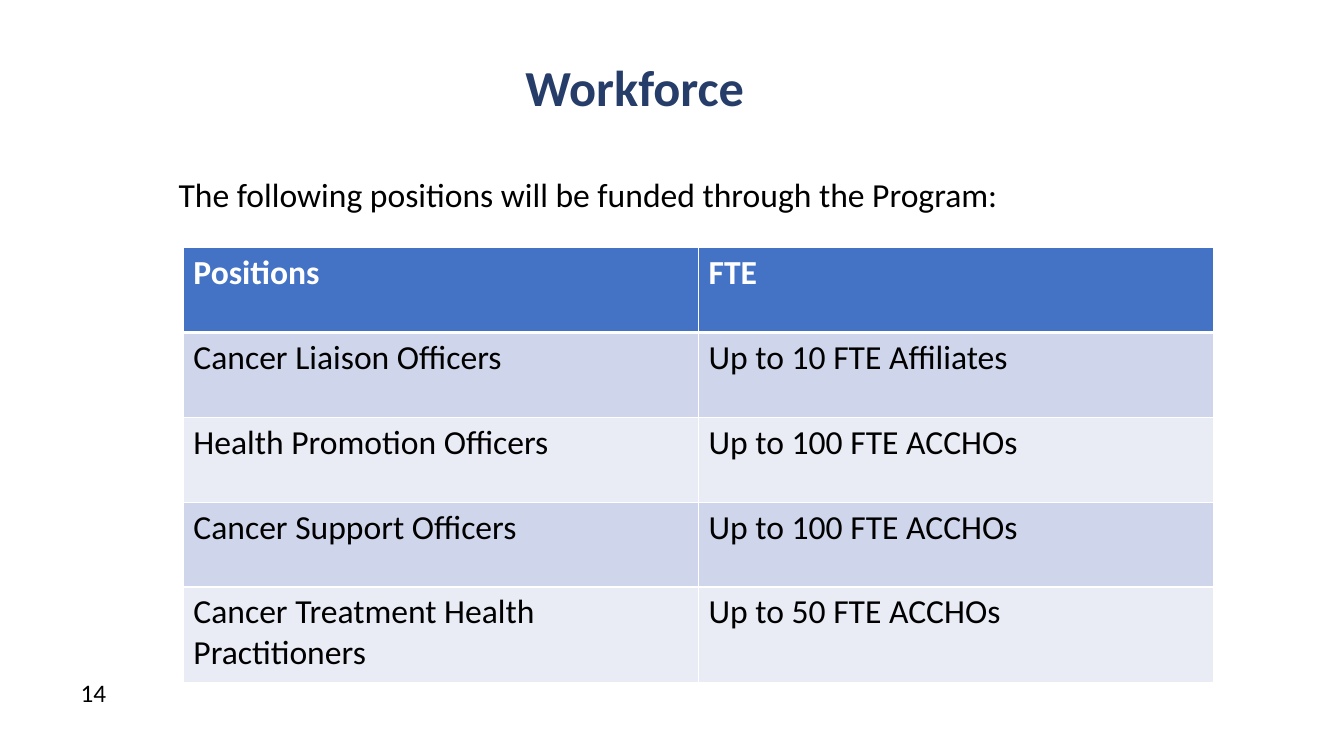
"""Build the Workforce slide with its table of funded positions."""
from pptx import Presentation
from pptx.dml.color import RGBColor
from pptx.enum.text import PP_ALIGN
from pptx.oxml import parse_xml
from pptx.oxml.ns import nsdecls
from pptx.util import Pt

TEXTS = [
    ("Workforce", "title", (104.5, 36.5, 698, 118), PP_ALIGN.CENTER),
    ("The following positions will be funded through the Program:",
     "body", (120.5, 121, 691, 65.5), PP_ALIGN.LEFT),
    ("14", "page", (50.5, 480, 49.5, 29), PP_ALIGN.LEFT),
]
ROWS = [
    ("Positions", "FTE"),
    ("Cancer Liaison Officers", "Up to 10 FTE Affiliates"),
    ("Health Promotion Officers", "Up to 100 FTE ACCHOs"),
    ("Cancer Support Officers", "Up to 100 FTE ACCHOs"),
    ("Cancer Treatment Health Practitioners", "Up to 50 FTE ACCHOs"),
]
LEFT, TOP, COL = 131, 177, 368
HEIGHTS = [60.6] * 4 + [68.4]
THEME = {
    "font": "Calibri",
    "title": (36, "263D69", True),
    "body": (24, "000000", False),
    "head": (24, "FFFFFF", True),
    "page": (18, "000000", False),
    "bands": ("E9EBF5", "CFD5EA"),
    "top": "4472C4",
    "rule": "FFFFFF",
}


def style(para, role):
    size, color, bold = THEME[role]
    font = para.font
    font.name, font.size, font.bold = THEME["font"], Pt(size), bold
    font.color.rgb = RGBColor.from_string(color)


def add_text(slide, text, role, box, align):
    frame = slide.shapes.add_textbox(*map(Pt, box)).text_frame
    frame.word_wrap = True
    para = frame.paragraphs[0]
    para.text, para.alignment = text, align
    style(para, role)


def add_rules(cell, row):
    heavy = {(0, "B"), (1, "T")}
    for side in "LRTB":
        width = Pt(3 if (row, side) in heavy else 1)
        cell._tc.get_or_add_tcPr().append(parse_xml(
            f'<a:ln{side} {nsdecls("a")} w="{width}"><a:solidFill>'
            f'<a:srgbClr val="{THEME["rule"]}"/></a:solidFill></a:ln{side}>'))


def add_grid(slide):
    cols = len(ROWS[0])
    box = map(Pt, (LEFT, TOP, COL * cols, sum(HEIGHTS)))
    table = slide.shapes.add_table(len(ROWS), cols, *box).table
    for col in table.columns:
        col.width = Pt(COL)
    for i, (texts, height) in enumerate(zip(ROWS, HEIGHTS)):
        table.rows[i].height = Pt(height)
        color = THEME["bands"][i % 2] if i else THEME["top"]
        for j, text in enumerate(texts):
            cell = table.cell(i, j)
            cell.text = text
            style(cell.text_frame.paragraphs[0], "body" if i else "head")
            add_rules(cell, i)
            cell.fill.solid()
            cell.fill.fore_color.rgb = RGBColor.from_string(color)


def main():
    deck = Presentation()
    deck.slide_width, deck.slide_height = Pt(960), Pt(540)
    slide = deck.slides.add_slide(deck.slide_layouts[6])
    for item in TEXTS:
        add_text(slide, *item)
    add_grid(slide)
    deck.save("out.pptx")


if __name__ == "__main__":
    main()
